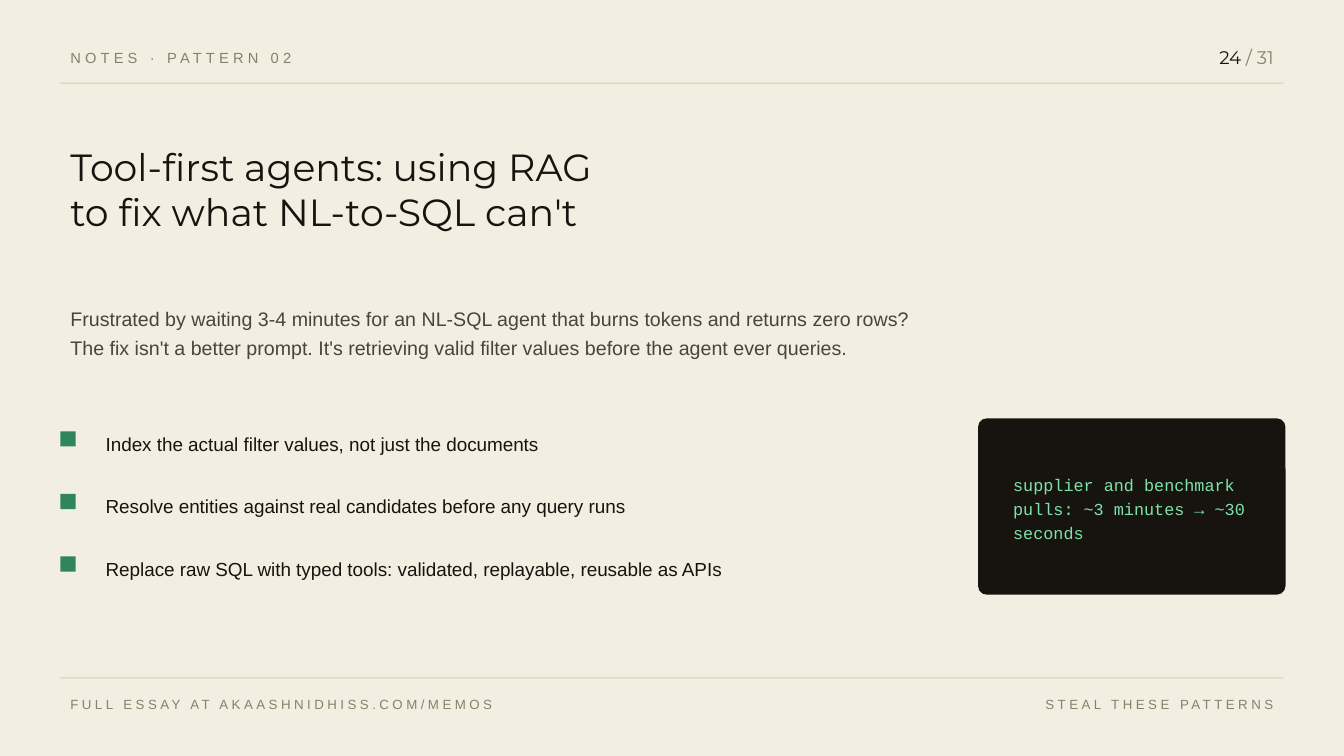
from pptx import Presentation
from pptx import util as u
from pptx.dml import color
from pptx.enum import shapes, text

PX = 9144
INK, MUTED, BODY = "171410", "8A7F68", "4A443A"
PAPER, RULE, GREEN, MINT = "F3EEE2", "D8CDB4", "2F865D", "7EE2A8"
LEFT, WIDTH = 60, 1213
POINTS = (
    "Index the actual filter values, not just the documents",
    "Resolve entities against real candidates before any query runs",
    "Replace raw SQL with typed tools: validated, replayable, reusable as APIs",
)


def paint(fill, tone):
    """Give a fill one solid colour from a hex string."""
    fill.solid()
    fill.fore_color.rgb = color.RGBColor.from_string(tone)


def style(run, size, tone, face, tracking=0):
    """Set a run's font, with optional letter spacing in points."""
    run.font.size = u.Pt(size)
    run.font.name = face
    paint(run.font.fill, tone)
    if tracking:
        run.font._element.set("spc", str(int(tracking * 100)))


def add_text(slide, box, words, size, tone, face="Arial", tracking=0, leading=None, right=False):
    """Add a wrapped, vertically centred text box and return its frame."""
    frame = slide.shapes.add_textbox(*(n * PX for n in box)).text_frame
    frame.word_wrap = True
    frame.vertical_anchor = text.MSO_ANCHOR.MIDDLE
    frame.text = words
    for paragraph in frame.paragraphs:
        if right:
            paragraph.alignment = text.PP_ALIGN.RIGHT
        if leading:
            paragraph.line_spacing = leading
        for run in paragraph.runs:
            style(run, size, tone, face, tracking)
    return frame


def add_block(slide, box, tone, kind=shapes.MSO_SHAPE.RECTANGLE):
    """Add a flat filled shape without outline or shadow."""
    block = slide.shapes.add_shape(kind, *(n * PX for n in box))
    block.shadow.inherit = False
    paint(block.fill, tone)
    block.line.fill.background()
    return block


def add_header(slide):
    """Draw the section label, page count and top rule."""
    add_text(slide, (LEFT, 42, 950, 30), "NOTES · PATTERN 02", 10.5, MUTED, tracking=3)
    page = add_text(slide, (1133, 40, 140, 34), "24", 13, INK, "Montserrat", right=True)
    total = page.paragraphs[0].add_run()
    total.text = " / 31"
    style(total, 13, MUTED, "Montserrat")
    add_block(slide, (LEFT, 82, WIDTH, 1), RULE)


def add_footer(slide):
    """Draw the bottom rule and both footer labels."""
    add_block(slide, (LEFT, 672, WIDTH, 1), RULE)
    add_text(slide, (LEFT, 684, 860, 30), "FULL ESSAY AT AKAASHNIDHISS.COM/MEMOS", 9.5, MUTED, tracking=2.5)
    add_text(slide, (853, 684, 420, 30), "STEAL THESE PATTERNS", 9.5, MUTED, tracking=2.5, right=True)


def add_points(slide):
    """List the points, each with a green square marker."""
    for row, point in enumerate(POINTS):
        top = 415 + 62 * row
        add_block(slide, (LEFT, top + 13, 15, 15), GREEN)
        add_text(slide, (95, top, 860, 50), point, 13.5, INK)


def add_result(slide):
    """Draw the dark card with the measured result."""
    card = add_block(slide, (970, 415, 305, 175), INK, shapes.MSO_SHAPE.ROUNDED_RECTANGLE)
    card.adjustments[0] = 0.05
    add_text(slide, (995, 440, 255, 125), "supplier and benchmark pulls: ~3 minutes → ~30 seconds",
             12, MINT, "Courier New", leading=1.2)


def main():
    """Build and save the slide."""
    deck = Presentation()
    deck.slide_width, deck.slide_height = 1333 * PX, 750 * PX
    slide = deck.slides.add_slide(deck.slide_layouts[6])
    paint(slide.background.fill, PAPER)
    add_header(slide)
    add_footer(slide)
    add_text(slide, (LEFT, 120, 960, 135),
             "Tool-first agents: using RAG\nto fix what NL-to-SQL can't", 27, INK, "Montserrat")
    add_text(slide, (LEFT, 275, 860, 105),
             "Frustrated by waiting 3-4 minutes for an NL-SQL agent that burns tokens and returns "
             "zero rows? The fix isn't a better prompt. It's retrieving valid filter values before "
             "the agent ever queries.", 14, BODY, leading=1.25)
    add_points(slide)
    add_result(slide)
    deck.save("out.pptx")


if __name__ == "__main__":
    main()
